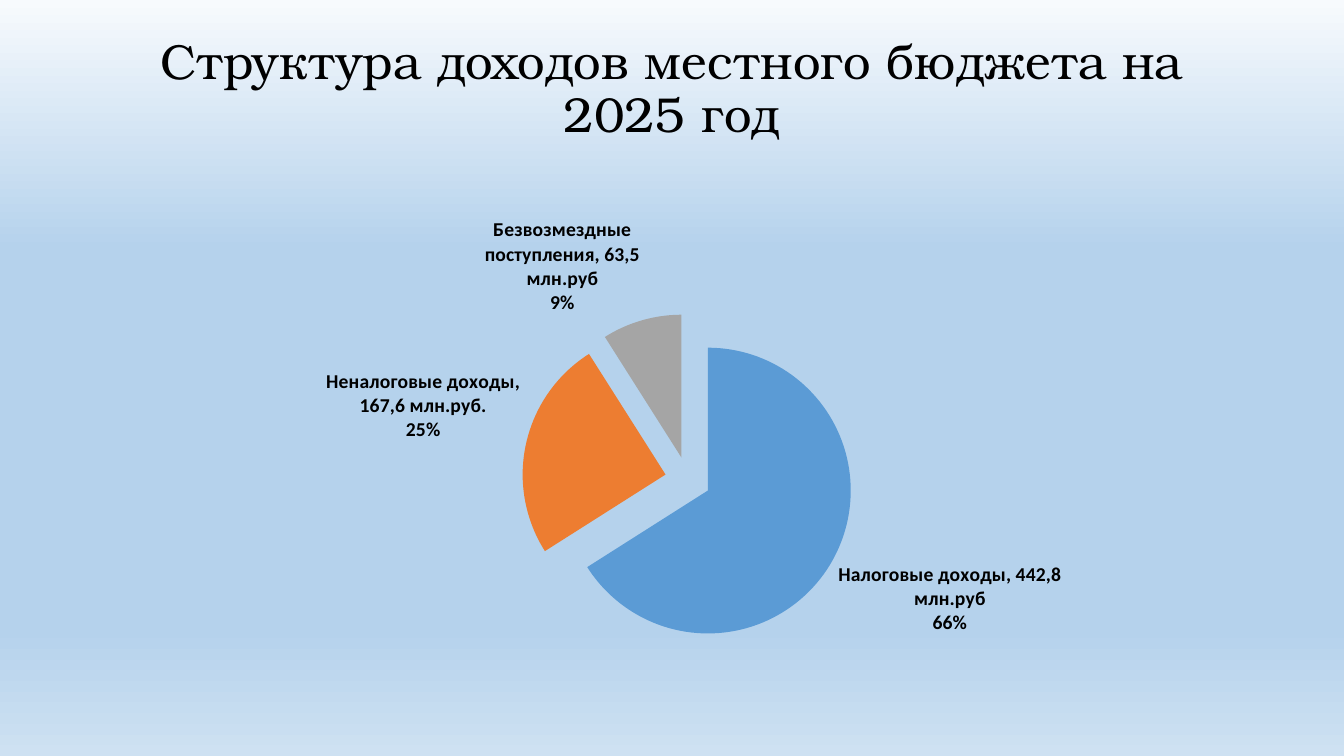
from lxml.etree import SubElement
from pptx import Presentation
from pptx.chart.data import CategoryChartData
from pptx.dml.color import RGBColor
from pptx.enum.chart import XL_CHART_TYPE, XL_LABEL_POSITION
from pptx.enum.text import MSO_ANCHOR, MSO_AUTO_SIZE, PP_ALIGN
from pptx.oxml.ns import qn
from pptx.util import Cm, Pt

TITLE = "Структура доходов местного бюджета на 2025 год"
INCOME = [  # category, share in percent, colour
    ("Налоговые доходы, 442,8 млн.руб", 66, "5B9BD5"),
    ("Неналоговые доходы, 167,6 млн.руб.", 25, "ED7D31"),
    ("Безвозмездные поступления, 63,5 млн.руб", 9, "A5A5A5"),
]
BACKGROUND = [(0, "F7FAFD"), (33, "B5D2EC"), (83, "B5D2EC"), (100, "CEE1F2")]
BLACK = "000000"
LEFT, WIDTH = Cm(2.33), Cm(29.21)


def color(value):
    return RGBColor.from_string(value)


def style_font(font, name, size, bold=False):
    font.name, font.size, font.bold = name, Pt(size), bold
    font.color.rgb = color(BLACK)


def paint_background(page):
    fill = page.background.fill
    fill.gradient()
    fill.gradient_angle = 270
    stops = page.element.find(".//" + qn("a:gsLst"))
    for stop in list(stops):
        stops.remove(stop)
    for percent, value in BACKGROUND:
        stop = SubElement(stops, qn("a:gs"), pos=str(percent * 1000))
        SubElement(stop, qn("a:srgbClr"), val=value)


def add_title(page):
    box = page.shapes.title
    box.left, box.top, box.width, box.height = LEFT, Cm(1.02), WIDTH, Cm(2.49)
    frame = box.text_frame
    frame.word_wrap = True
    frame.auto_size = MSO_AUTO_SIZE.NONE
    frame.vertical_anchor = MSO_ANCHOR.MIDDLE
    para = frame.paragraphs[0]
    para.alignment, para.line_spacing = PP_ALIGN.CENTER, 0.9
    span = para.add_run()
    span.text = TITLE
    style_font(span.font, "TeX Gyre Bonum", 35)


def add_income_pie(page):
    data = CategoryChartData()
    data.categories = [name for name, share, value in INCOME]
    data.add_series("Доходы", [share for name, share, value in INCOME])
    chart = page.shapes.add_chart(
        XL_CHART_TYPE.PIE, LEFT, Cm(5.08), WIDTH, Cm(12.09), data).chart
    chart.has_title = chart.has_legend = False
    style_font(chart.font, "Calibri", 10)
    plot = chart.plots[0]
    plot.vary_by_categories = True
    series = plot.series[0]

    # Slices pulled apart
    for index, (name, share, value) in enumerate(INCOME):
        fill = series.points[index].format.fill
        fill.solid()
        fill.fore_color.rgb = color(value)
    for point in series._element.findall(qn("c:dPt")):
        explosion = SubElement(point, qn("c:explosion"), val="16")
        point.find(qn("c:spPr")).addprevious(explosion)

    # Category and percentage on separate lines
    labels = series.data_labels
    labels.show_category_name = labels.show_percentage = True
    labels.show_value = False
    labels.position = XL_LABEL_POSITION.OUTSIDE_END
    style_font(labels.font, "Calibri", 14, True)
    separator = SubElement(labels._element, qn("c:separator"))
    separator.text = "\n"
    labels._element.find(qn("c:showBubbleSize")).addnext(separator)


def main():
    deck = Presentation()
    deck.slide_width, deck.slide_height = Cm(33.87), Cm(19.05)
    page = deck.slides.add_slide(deck.slide_layouts[5])
    paint_background(page)
    add_title(page)
    add_income_pie(page)
    deck.save("out.pptx")


if __name__ == "__main__":
    main()
